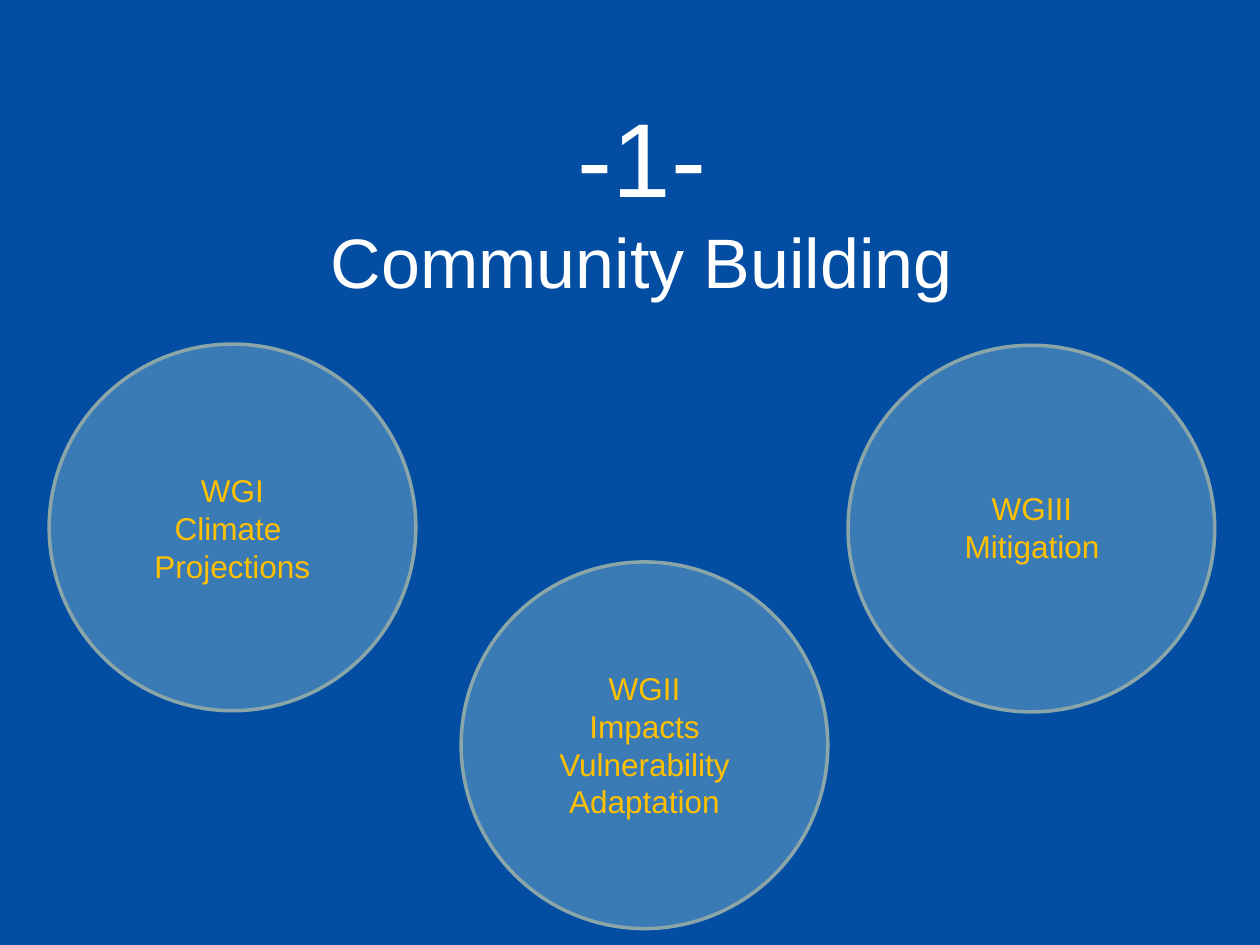
from lxml.etree import SubElement
from pptx import Presentation
from pptx.dml.color import RGBColor
from pptx.enum.shapes import MSO_SHAPE
from pptx.enum.text import MSO_ANCHOR, MSO_AUTO_SIZE, PP_ALIGN
from pptx.oxml.ns import qn
from pptx.util import Pt

BLUE = RGBColor(0x03, 0x4E, 0xA2)
PALE = RGBColor(0xBB, 0xE0, 0xE3)
EDGE = RGBColor(0x8A, 0xA6, 0xA8)
GOLD = RGBColor(0xFF, 0xC0, 0x00)
WHITE = RGBColor(0xFF, 0xFF, 0xFF)
FONT = "Arial"
DIAMETER = 209.5

GROUPS = [
    ((28.1, 196.6), (80.6, 265.7, 104.4, 72.7), False,
     ["WGI", "Climate ", "Projections"]),
    ((484.6, 197.3), (513.4, 275.8, 152.6, 51.1), True,
     ["WGIII", "Mitigation"]),
    ((263.5, 321.1), (284.4, 378.7, 167.8, 94.3), True,
     ["WGII", "Impacts", "Vulnerability", "Adaptation"]),
]


def style_run(r, size, color):
    """Apply the slide font to a run."""
    r.font.name = FONT
    r.font.size = Pt(size)
    r.font.color.rgb = color


def place_title(slide, left, top, width, height):
    """Fill and format the title placeholder in the given box."""
    sp = slide.shapes.title
    sp.left, sp.top, sp.width, sp.height = Pt(left), Pt(top), Pt(width), Pt(height)
    tf = sp.text_frame
    tf.text = "-1-\vCommunity Building"
    tf.word_wrap = True
    tf.auto_size = MSO_AUTO_SIZE.NONE
    tf.vertical_anchor = MSO_ANCHOR.TOP
    tf.margin_left = tf.margin_right = tf.margin_bottom = 0
    tf.margin_top = Pt(4)
    p = tf.paragraphs[0]
    p.alignment = PP_ALIGN.CENTER
    p.space_before = Pt(0)
    p.line_spacing = 1.0
    for r, size in zip(p.runs, (60, 40)):
        style_run(r, size, WHITE)


def add_circle(slide, left, top):
    """Draw one translucent working group circle."""
    sp = slide.shapes.add_shape(MSO_SHAPE.OVAL, Pt(left), Pt(top),
                                Pt(DIAMETER), Pt(DIAMETER))
    sp.shadow.inherit = False
    sp.fill.solid()
    sp.fill.fore_color.rgb = PALE
    color = sp.fill._xPr.find(qn("a:solidFill")).find(qn("a:srgbClr"))
    SubElement(color, qn("a:alpha"), val="30000")
    sp.line.color.rgb = EDGE
    sp.line.width = Pt(2)


def add_label(slide, box, wrap, lines):
    """Write centred lines in the given box."""
    sp = slide.shapes.add_textbox(*map(Pt, box))
    tf = sp.text_frame
    tf.text = "\n".join(lines)
    tf.word_wrap = wrap
    tf.auto_size = MSO_AUTO_SIZE.SHAPE_TO_FIT_TEXT
    for p in tf.paragraphs:
        p.alignment = PP_ALIGN.CENTER
        style_run(p.runs[0], 18, GOLD)


def main():
    """Build and save the slide."""
    prs = Presentation()
    prs.slide_width, prs.slide_height = Pt(720), Pt(540)
    slide = prs.slides.add_slide(prs.slide_layouts[5])
    slide.background.fill.solid()
    slide.background.fill.fore_color.rgb = BLUE
    place_title(slide, 51.8, 49, 630, 90)
    for corner, _, _, _ in GROUPS:
        add_circle(slide, *corner)
    for _, box, wrap, lines in GROUPS:
        add_label(slide, box, wrap, lines)
    prs.save("out.pptx")


if __name__ == "__main__":
    main()
